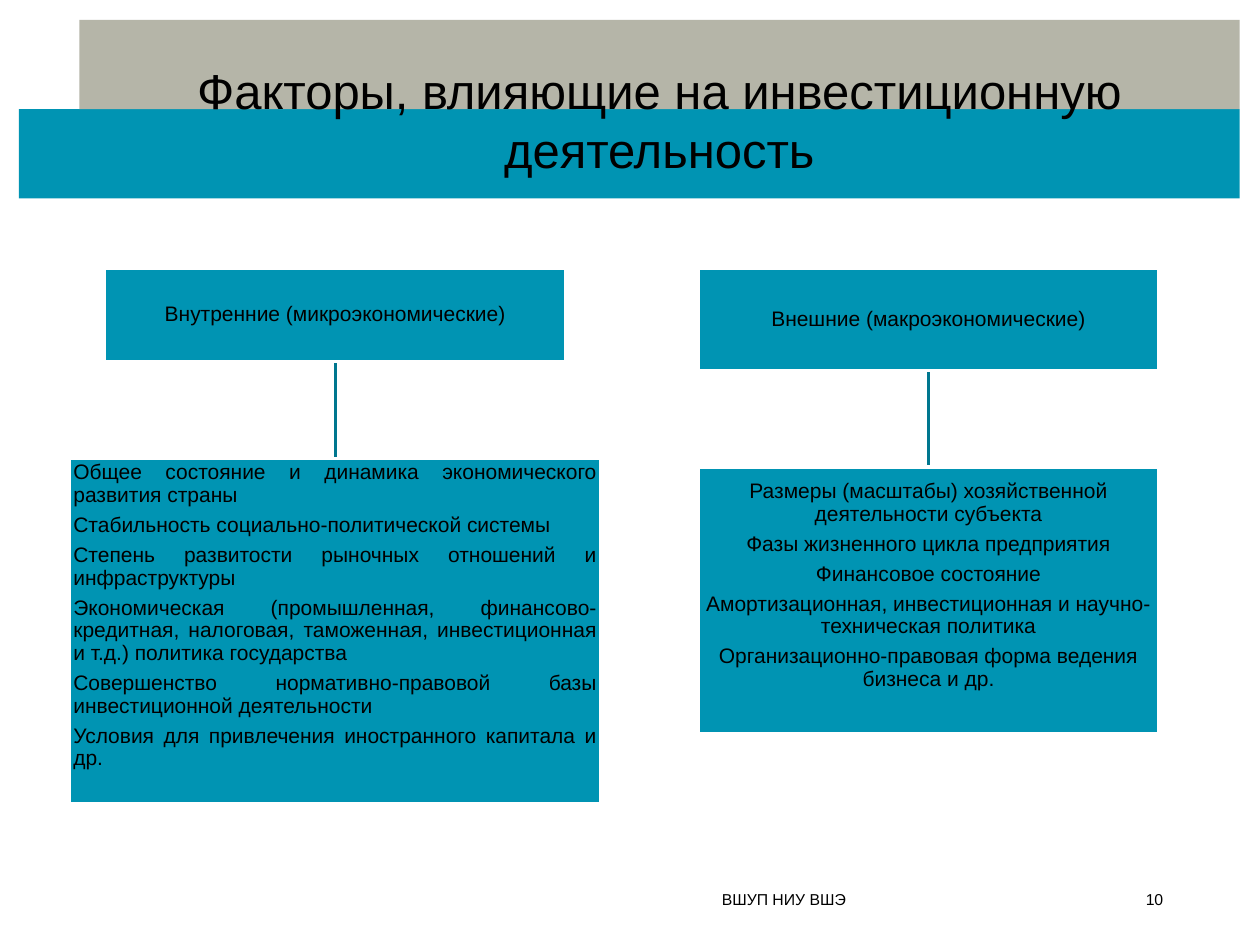
from lxml import etree
from pptx import Presentation
from pptx.dml.color import RGBColor
from pptx.enum import shapes, text
from pptx.oxml.ns import qn
from pptx.util import Cm, Pt

TEAL, DARK_TEAL, GREY = "0094B3", "00778F", "B5B5A8"
WHITE, BLACK = "FFFFFF", "000000"
ALIGN, ANCHOR = text.PP_ALIGN, text.MSO_ANCHOR

INTERNAL = [
    "Общее состояние и динамика экономического развития страны",
    "Стабильность социально-политической системы",
    "Степень развитости рыночных отношений и инфраструктуры",
    "Экономическая (промышленная, финансово-кредитная, налоговая, "
    "таможенная, инвестиционная и т.д.) политика государства",
    "Совершенство нормативно-правовой базы инвестиционной деятельности",
    "Условия для привлечения иностранного капитала и др.",
]
EXTERNAL = [
    "Размеры (масштабы) хозяйственной деятельности субъекта",
    "Фазы жизненного цикла предприятия",
    "Финансовое состояние",
    "Амортизационная, инвестиционная и научно-техническая политика",
    "Организационно-правовая форма ведения бизнеса и др.",
]


def rgb(color):
    return RGBColor.from_string(color)


def add_rect(s, box, fill, line=None):
    sp = s.shapes.add_shape(shapes.MSO_SHAPE.RECTANGLE, *map(Cm, box))
    sp.shadow.inherit = False
    sp.fill.solid()
    sp.fill.fore_color.rgb = rgb(fill)
    if line:
        sp.line.color.rgb = rgb(line)
        sp.line.width = Pt(2)
    else:
        sp.line.fill.background()
    return sp


def write(tf, lines, size, align, anchor):
    tf.word_wrap = True
    tf.vertical_anchor = anchor
    for i, line in enumerate(lines):
        p = tf.paragraphs[0] if i == 0 else tf.add_paragraph()
        p.alignment = align
        r = p.add_run()
        r.text = line
        r.font.name = "Arial"
        r.font.size = Pt(size)
        r.font.color.rgb = rgb(BLACK)


def add_text(s, box, line, size, align):
    tf = s.shapes.add_textbox(*map(Cm, box)).text_frame
    write(tf, [line], size, align, ANCHOR.MIDDLE)


def add_header(s, left, top, width, height):
    half, indent = height / 2, 1.22
    add_rect(s, (left, top + half, width, half), TEAL)
    add_rect(s, (left + indent, top, width - indent, half), GREY)
    add_text(s, (left + 2.51, top + 0.68, 20.8, 2.67),
             "Факторы, влияющие на инвестиционную деятельность",
             28, ALIGN.CENTER)


def add_panel(s, box, lines, align, side=0.03, bottom=0.03):
    tf = add_rect(s, box, TEAL, WHITE).text_frame
    tf.margin_left = tf.margin_right = Cm(side)
    tf.margin_top, tf.margin_bottom = Cm(0.03), Cm(bottom)
    write(tf, lines, 12, align, ANCHOR.MIDDLE)
    for p in tf.paragraphs:
        p.line_spacing = 0.9
        p.space_after = Pt(4.2)


def add_branch(s, center, top, head, head_height, body, body_size, align, side):
    """Stack a heading, a link and a list of factors around a centre line."""
    head_width, link = 9.3, 1.95
    body_width, body_height = body_size
    link_top = top + head_height
    body_top = link_top + link
    ln = s.shapes.add_connector(shapes.MSO_CONNECTOR.STRAIGHT, Cm(center),
                                Cm(link_top), Cm(center), Cm(body_top))
    ln.line.color.rgb = rgb(DARK_TEAL)
    ln.line.width = Pt(2)
    etree.SubElement(ln._element.spPr, qn("a:effectLst"))
    add_panel(s, (center - head_width / 2, top, head_width, head_height),
              [head], ALIGN.CENTER)
    add_panel(s, (center - body_width / 2, body_top, body_width, body_height),
              body, align, side, bottom=0.63)


def add_footer(s, left, top, width):
    height, number_width = 0.38, 1.19
    add_text(s, (left, top, 14.4, height), "ВШУП НИУ ВШЭ", 9, ALIGN.RIGHT)
    add_text(s, (left + width - number_width, top, number_width, height),
             "10", 9, ALIGN.RIGHT)


def main():
    prs = Presentation()
    prs.slide_width, prs.slide_height = Cm(25.4), Cm(19.05)
    s = prs.slides.add_slide(prs.slide_layouts[6])
    add_header(s, 0.38, 0.4, 24.61, 3.6)
    add_branch(s, 18.72, 5.41, "Внешние (макроэкономические)", 2.06,
               EXTERNAL, (9.3, 5.38), ALIGN.CENTER, 0.03)
    add_branch(s, 6.76, 5.41, "Внутренние (микроэкономические)", 1.88,
               INTERNAL, (10.72, 6.96), ALIGN.JUSTIFY, 0.08)
    add_footer(s, 2.9, 17.93, 20.8)
    prs.save("out.pptx")


if __name__ == "__main__":
    main()
